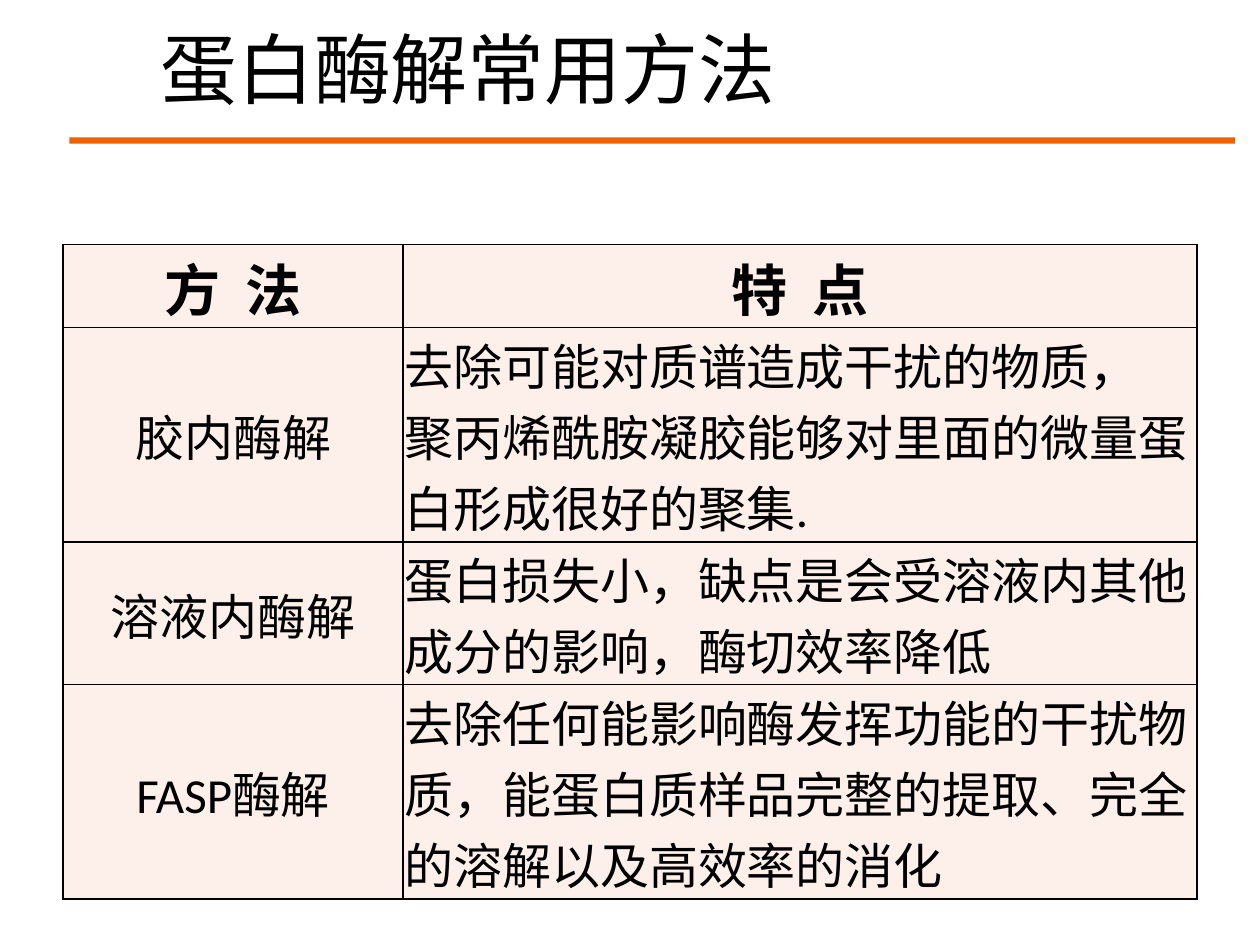
from dataclasses import dataclass
from typing import Any

import pptx
import pptx.dml.color
import pptx.enum.shapes
import pptx.enum.text
import pptx.oxml
import pptx.oxml.ns
import pptx.util

Inches = pptx.util.Inches
ALIGN = pptx.enum.text.PP_ALIGN
MIDDLE = pptx.enum.text.MSO_ANCHOR.MIDDLE
BLACK = "000000"
CELL_FILL = "FDEFE9"
RULE_FILL = "EE6000"
COLUMN_WIDTHS = (2.7, 6.3)


@dataclass(frozen=True)
class MethodRow:
    method: str
    feature: str
    height: float
    size: int = 28
    bold: bool = False
    feature_alignment: Any = ALIGN.LEFT


METHOD_ROWS = (
    MethodRow("方  法", "特  点", 0.66, 32, True, ALIGN.CENTER),
    MethodRow(
        "胶内酶解",
        "去除可能对质谱造成干扰的物质， 聚丙烯酰胺凝胶能够对里面的微量蛋白形成很好的聚集.",
        1.7,
    ),
    MethodRow("溶液内酶解", "蛋白损失小，缺点是会受溶液内其他成分的影响，酶切效率降低", 1.13),
    MethodRow(
        "FASP酶解",
        "去除任何能影响酶发挥功能的干扰物质，能蛋白质样品完整的提取、完全的溶解以及高效率的消化",
        1.7,
    ),
)


def color(value: str) -> pptx.dml.color.RGBColor:
    return pptx.dml.color.RGBColor.from_string(value)


def set_attributes(target: Any, values: dict[str, Any]) -> None:
    for name, value in values.items():
        setattr(target, name, value)


def fill_solid(target: Any, value: str) -> None:
    target.fill.solid()
    target.fill.fore_color.rgb = color(value)


def write_paragraph(paragraph: Any, text: str, size: int, bold: bool, alignment: Any) -> None:
    paragraph.alignment = alignment
    run = paragraph.add_run()
    run.text = text
    set_attributes(run.font, {"name": "Calibri", "size": pptx.util.Pt(size), "bold": bold})
    run.font.color.rgb = color(BLACK)


def add_borders(cell: Any) -> None:
    properties = cell._tc.get_or_add_tcPr()
    for index, side in enumerate(("lnL", "lnR", "lnT", "lnB")):
        border = pptx.oxml.parse_xml(
            f'<a:{side} {pptx.oxml.ns.nsdecls("a")} w="{pptx.util.Pt(1)}">'
            f'<a:solidFill><a:srgbClr val="{BLACK}"/></a:solidFill></a:{side}>'
        )
        properties.insert(index, border)


def add_title(slide: Any) -> None:
    title = slide.shapes.title
    set_attributes(title, {
        "left": Inches(1.17), "top": Inches(0.23),
        "width": Inches(7.97), "height": Inches(0.71),
    })
    set_attributes(title.text_frame, {"vertical_anchor": MIDDLE, "word_wrap": True})
    paragraph = title.text_frame.paragraphs[0]
    paragraph.line_spacing = 0.9
    write_paragraph(paragraph, "蛋白酶解常用方法", 44, False, ALIGN.LEFT)


def add_rule(slide: Any) -> None:
    rule = slide.shapes.add_shape(
        pptx.enum.shapes.MSO_SHAPE.RECTANGLE,
        Inches(0.55), Inches(1.09), Inches(9.25), Inches(0.05),
    )
    fill_solid(rule, RULE_FILL)
    rule.line.fill.background()
    rule.shadow.inherit = False


def add_method_table(slide: Any, rows: tuple[MethodRow, ...]) -> None:
    table = slide.shapes.add_table(
        len(rows), len(COLUMN_WIDTHS), Inches(0.5), Inches(1.94),
        Inches(sum(COLUMN_WIDTHS)), Inches(sum(row.height for row in rows)),
    ).table
    for column, width in zip(table.columns, COLUMN_WIDTHS):
        column.width = Inches(width)
    margin = Inches(0.01)
    cell_format = {
        "margin_left": margin, "margin_right": margin, "margin_top": margin,
        "margin_bottom": 0, "vertical_anchor": MIDDLE,
    }
    for row_index, row in enumerate(rows):
        table.rows[row_index].height = Inches(row.height)
        contents = ((row.method, ALIGN.CENTER), (row.feature, row.feature_alignment))
        for column_index, (text, alignment) in enumerate(contents):
            cell = table.cell(row_index, column_index)
            set_attributes(cell, cell_format)
            fill_solid(cell, CELL_FILL)
            add_borders(cell)
            write_paragraph(cell.text_frame.paragraphs[0], text, row.size, row.bold, alignment)


def main() -> None:
    presentation = pptx.Presentation()
    set_attributes(presentation, {"slide_width": Inches(10), "slide_height": Inches(7.5)})
    slide = presentation.slides.add_slide(presentation.slide_layouts[5])
    add_method_table(slide, METHOD_ROWS)
    add_rule(slide)
    add_title(slide)
    presentation.save("out.pptx")


if __name__ == "__main__":
    main()
